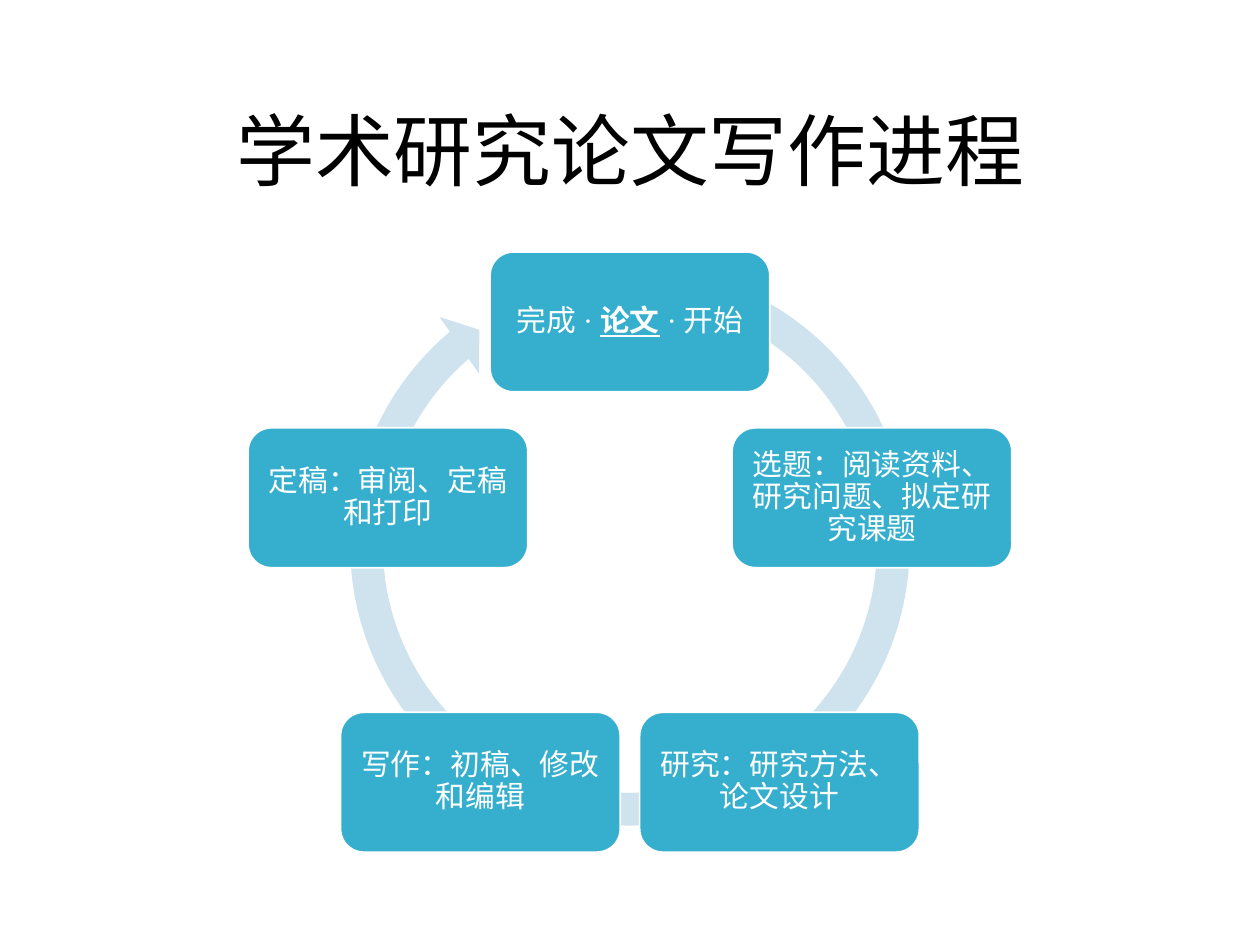
from dataclasses import dataclass
from math import cos, pi, sin

from pptx import Presentation
from pptx.dml.color import RGBColor as Rgb
from pptx.enum.lang import MSO_LANGUAGE_ID as Lang
from pptx.enum.shapes import MSO_SHAPE as Kind
from pptx.enum.text import MSO_ANCHOR as Anchor, PP_ALIGN as Align
from pptx.util import Cm, Pt

HUES = {"node": "36AFCE", "ring": "CEE3ED", "white": "FFFFFF", "black": "000000"}
FONT = "Times New Roman"
MID_X, MID_Y, RADIUS = 12.7, 11.62, 5.13
NODE_W, NODE_H = 5.64, 2.82
RING_TOP, RING_SIZE = 5.0, 12.01
RING_ADJ = (0.055, 3.307, 137.765, 173.856, 0.058)
FRAME = {"word_wrap": True, "vertical_anchor": Anchor.MIDDLE}
INSETS = ("margin_left", "margin_top", "margin_right", "margin_bottom")
NODE_FRAME = FRAME | {side: Cm(0.18) for side in INSETS}
PARA = {"alignment": Align.CENTER, "line_spacing": 0.9}


@dataclass(frozen=True)
class Run:
    text: str
    key: bool = False


@dataclass(frozen=True)
class Step:
    runs: tuple[Run, ...]


STEPS = (
    Step((Run("完成·"), Run("论文", key=True), Run("·开始"))),
    Step((Run("选题：阅读资料、研究问题、拟定研究课题"),)),
    Step((Run("研究：研究方法、论文设计"),)),
    Step((Run("写作：初稿、修改和编辑"),)),
    Step((Run("定稿：审阅、定稿和打印"),)),
)


def apply(item, values: dict) -> None:
    """Set each attribute of item from values."""
    for name, value in values.items():
        setattr(item, name, value)


def write(frame, runs: tuple[Run, ...], size: float, hue: str, form: dict) -> None:
    apply(frame, form)
    para = frame.paragraphs[0]
    apply(para, PARA)
    for part in runs:
        run = para.add_run()
        run.text = part.text
        apply(run.font, {"name": FONT, "size": Pt(size), "bold": part.key,
                         "underline": part.key, "language_id": Lang.SIMPLIFIED_CHINESE})
        run.font.color.rgb = Rgb.from_string(HUES[hue])


def add_form(slide, kind: Kind, box: tuple[float, ...], hue: str):
    """Add a flat, filled shape without an outline; box is in cm."""
    shape = slide.shapes.add_shape(kind, *map(Cm, box))
    shape.shadow.inherit = False
    shape.fill.solid()
    shape.fill.fore_color.rgb = Rgb.from_string(HUES[hue])
    shape.line.fill.background()
    return shape


def add_title(slide, text: str) -> None:
    title = slide.shapes.title
    apply(title, {"left": Cm(1.75), "top": Cm(1.55),
                  "width": Cm(21.9), "height": Cm(3.15)})
    write(title.text_frame, (Run(text),), 45, "black", FRAME)


def add_ring(slide) -> None:
    box = (MID_X - RING_SIZE / 2, RING_TOP, RING_SIZE, RING_SIZE)
    ring = add_form(slide, Kind.CIRCULAR_ARROW, box, "ring")
    for i, value in enumerate(RING_ADJ):
        ring.adjustments[i] = value


def add_step(slide, step: Step, turn: float) -> None:
    """Place a step on the circle, turn radians clockwise from the top."""
    left = MID_X + RADIUS * sin(turn) - NODE_W / 2
    top = MID_Y - RADIUS * cos(turn) - NODE_H / 2
    node = add_form(slide, Kind.ROUNDED_RECTANGLE, (left, top, NODE_W, NODE_H), "node")
    node.line.color.rgb = Rgb.from_string(HUES["white"])
    node.line.width = Pt(1)
    write(node.text_frame, step.runs, 17, "white", NODE_FRAME)


def main() -> None:
    deck = Presentation()
    apply(deck, {"slide_width": Cm(25.4), "slide_height": Cm(19.05)})
    slide = deck.slides.add_slide(deck.slide_layouts[5])
    add_title(slide, "学术研究论文写作进程")
    add_ring(slide)
    for i, step in enumerate(STEPS):
        add_step(slide, step, 2 * pi * i / len(STEPS))
    deck.save("out.pptx")


if __name__ == "__main__":
    main()
